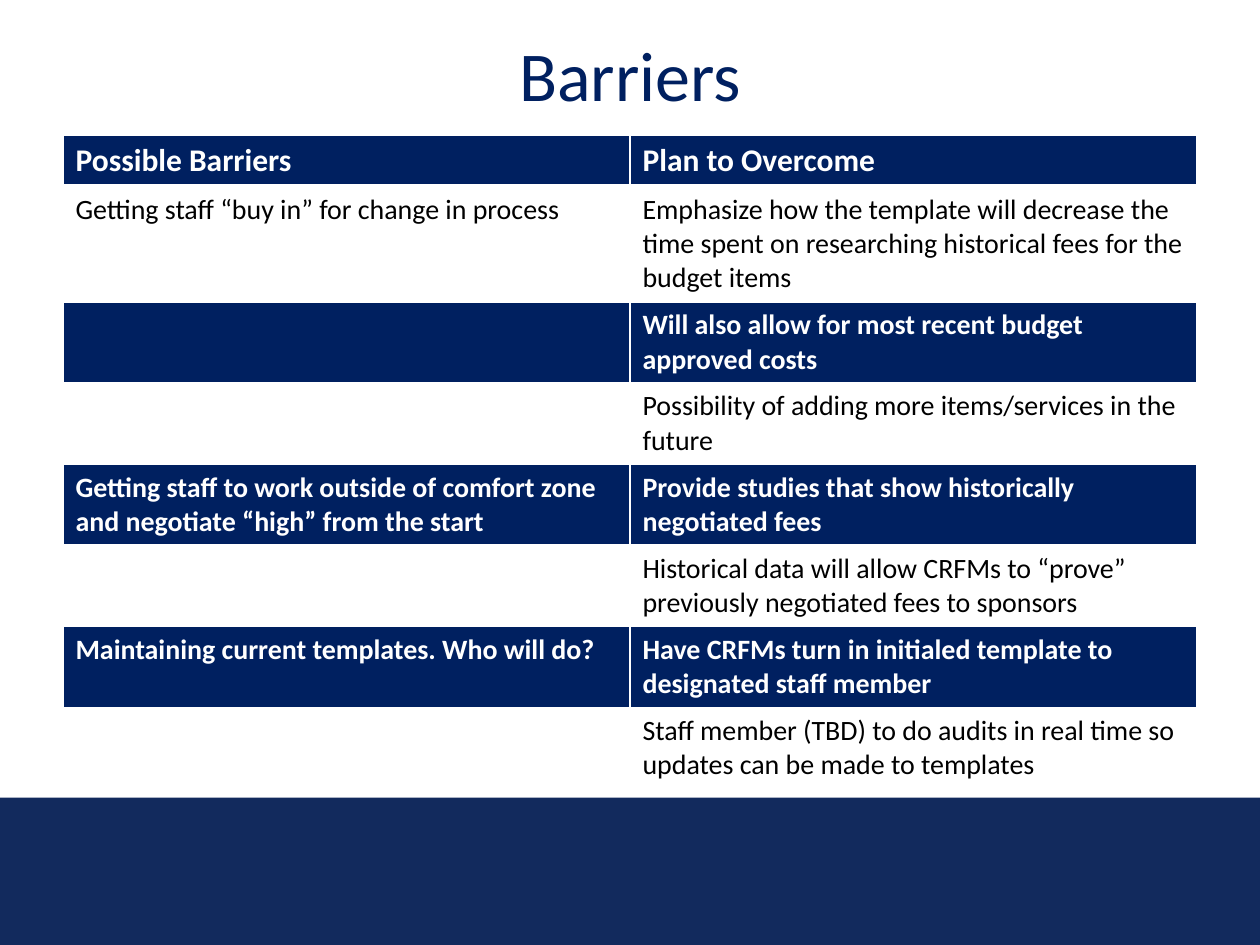
from lxml.etree import SubElement
from pptx import Presentation
from pptx.dml.color import RGBColor
from pptx.enum.shapes import MSO_SHAPE
from pptx.enum.text import MSO_ANCHOR, PP_ALIGN
from pptx.oxml.ns import qn
from pptx.util import Inches, Pt

NAVY = RGBColor(0x00, 0x20, 0x60)
BAND_BLUE = RGBColor(0x12, 0x2A, 0x5D)
WHITE = RGBColor(0xFF, 0xFF, 0xFF)
BLACK = RGBColor(0x00, 0x00, 0x00)
FONT = "Calibri"

TITLE = "Barriers"
ROWS = [
    ("Possible Barriers", "Plan to Overcome"),
    ("Getting staff “buy in” for change in process",
     "Emphasize how the template will decrease the time spent on researching "
     "historical fees for the budget items"),
    ("", "Will also allow for most recent budget approved costs"),
    ("", "Possibility of adding more items/services in the future"),
    ("Getting staff to work outside of comfort zone and negotiate “high” from the start",
     "Provide studies that show historically negotiated fees"),
    ("", "Historical data will allow CRFMs to “prove” previously negotiated fees to sponsors"),
    ("Maintaining current templates. Who will do?",
     "Have CRFMs turn in initialed template to designated staff member"),
    ("", "Staff member (TBD) to do audits in real time so updates can be made to templates"),
]
ROW_HEIGHT = 0.41


def add_run(paragraph, text, size, color, bold=False):
    """Add one formatted run to a paragraph."""
    run = paragraph.add_run()
    run.text = text
    run.font.name = FONT
    run.font.size = Pt(size)
    run.font.bold = bold
    run.font.color.rgb = color


def set_borders(cell, bottom_width):
    """Draw white borders around a table cell."""
    properties = cell._tc.get_or_add_tcPr()
    for side, width in (("L", 1), ("R", 1), ("T", 1), ("B", bottom_width)):
        line = SubElement(properties, qn(f"a:ln{side}"), w=str(Pt(width)))
        fill = SubElement(line, qn("a:solidFill"))
        SubElement(fill, qn("a:srgbClr"), val=str(WHITE))


def add_band(slide):
    """Add the blue band along the foot of the slide."""
    band = slide.shapes.add_shape(
        MSO_SHAPE.RECTANGLE, Inches(0), Inches(6.33), Inches(10), Inches(1.17))
    band.shadow.inherit = False
    band.fill.solid()
    band.fill.fore_color.rgb = BAND_BLUE
    band.line.fill.background()


def add_title(slide):
    """Place and fill the title placeholder."""
    title = slide.shapes.title
    title.left, title.top = Inches(0.5), Inches(0.09)
    title.width, title.height = Inches(9), Inches(0.98)
    title.text_frame.vertical_anchor = MSO_ANCHOR.MIDDLE
    paragraph = title.text_frame.paragraphs[0]
    paragraph.alignment = PP_ALIGN.CENTER
    add_run(paragraph, TITLE, 40, NAVY)


def add_barrier_table(slide):
    """Add the table, with dark and light rows alternating."""
    table = slide.shapes.add_table(
        len(ROWS), len(ROWS[0]), Inches(0.5), Inches(1.07),
        Inches(9), Inches(ROW_HEIGHT * len(ROWS))).table
    for row_index, texts in enumerate(ROWS):
        is_header = row_index == 0
        is_dark = row_index % 2 == 0
        for column_index, text in enumerate(texts):
            cell = table.cell(row_index, column_index)
            set_borders(cell, 3 if is_header else 1)
            cell.fill.solid()
            cell.fill.fore_color.rgb = NAVY if is_dark else WHITE
            if text:
                add_run(cell.text_frame.paragraphs[0], text, 18 if is_header else 16,
                        WHITE if is_dark else BLACK, is_dark)


def main():
    """Build the barriers slide."""
    presentation = Presentation()
    presentation.slide_width, presentation.slide_height = Inches(10), Inches(7.5)
    slide = presentation.slides.add_slide(presentation.slide_layouts[5])
    add_band(slide)
    add_title(slide)
    add_barrier_table(slide)
    presentation.save("out.pptx")


if __name__ == "__main__":
    main()
